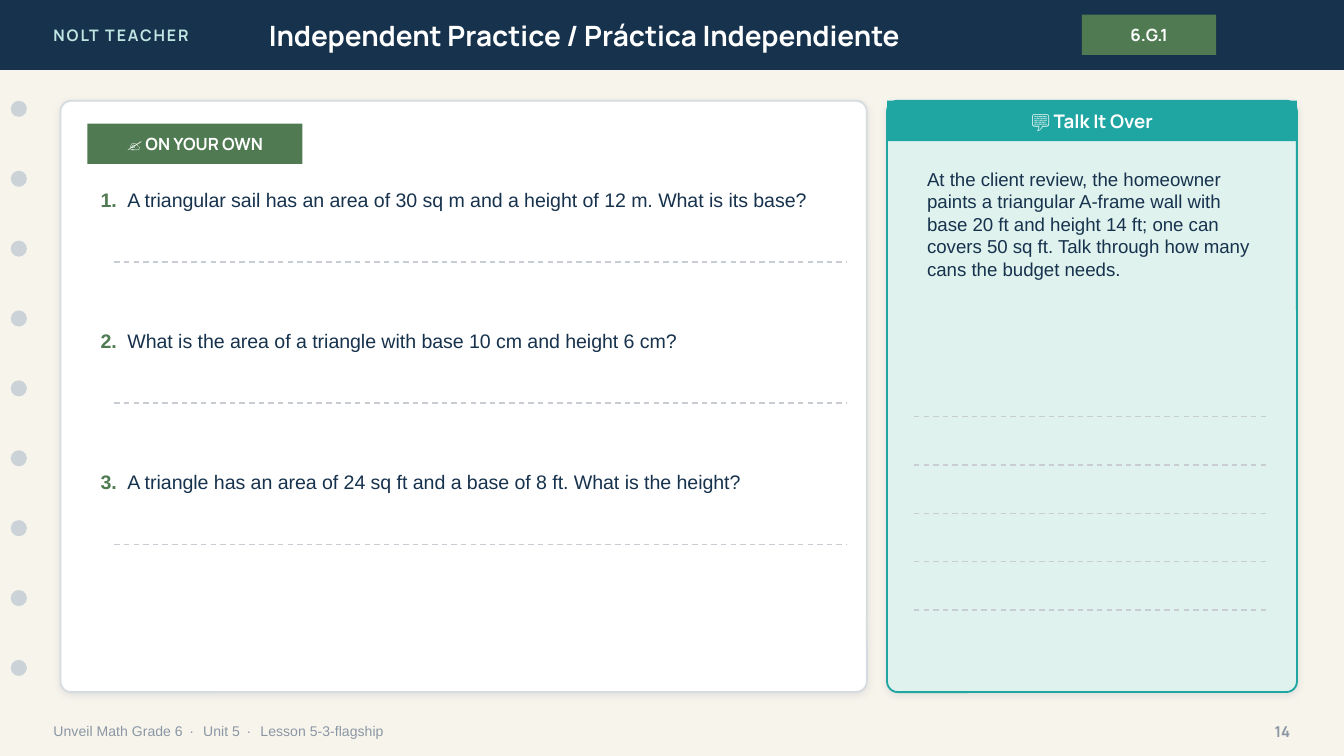
"""Build the bilingual independent practice slide."""
from lxml import etree
from pptx import Presentation
from pptx.dml.color import RGBColor
from pptx.enum.dml import MSO_LINE
from pptx.enum.shapes import MSO_CONNECTOR, MSO_SHAPE
from pptx.enum.text import MSO_ANCHOR, MSO_AUTO_SIZE, PP_ALIGN
from pptx.oxml.ns import qn
from pptx.util import Emu, Pt

EMU_PER_PX = 4572
RECTANGLE, ROUNDED, OVAL = MSO_SHAPE.RECTANGLE, MSO_SHAPE.ROUNDED_RECTANGLE, MSO_SHAPE.OVAL
STRAIGHT, DASH = MSO_CONNECTOR.STRAIGHT, MSO_LINE.DASH
TOP, MIDDLE = MSO_ANCHOR.TOP, MSO_ANCHOR.MIDDLE
LEFT, CENTER, RIGHT = PP_ALIGN.LEFT, PP_ALIGN.CENTER, PP_ALIGN.RIGHT
NO_AUTOFIT = MSO_AUTO_SIZE.NONE

HEADING_FONT, BODY_FONT = "Manrope", "Arial"
NAVY = RGBColor(0x17, 0x32, 0x4D)
GREEN = RGBColor(0x4F, 0x7A, 0x52)
TEAL = RGBColor(0x1F, 0xA6, 0xA2)
MINT = RGBColor(0xDF, 0xF2, 0xEE)
AQUA = RGBColor(0xBF, 0xE6, 0xE2)
CREAM = RGBColor(0xF7, 0xF4, 0xEC)
WHITE = RGBColor(0xFF, 0xFF, 0xFF)
HOLE_GRAY = RGBColor(0xCB, 0xD3, 0xD9)
BORDER_GRAY = RGBColor(0xD6, 0xDB, 0xDF)
RULE_GRAY = RGBColor(0xC7, 0xCD, 0xD2)
FOOTER_GRAY = RGBColor(0x8A, 0x96, 0xA3)
SHADOW_COLOR = "1C2E42"

QUESTIONS = (
    "A triangular sail has an area of 30 sq m and a height of 12 m. What is its base?",
    "What is the area of a triangle with base 10 cm and height 6 cm?",
    "A triangle has an area of 24 sq ft and a base of 8 ft. What is the height?",
)
TALK_PROMPT = (
    "At the client review, the homeowner paints a triangular A-frame wall with "
    "base 20 ft and height 14 ft; one can covers 50 sq ft. "
    "Talk through how many cans the budget needs."
)
FOOTER_PARTS = ("Unveil Math Grade 6", "Unit 5", "Lesson 5-3-flagship")


def px(*lengths):
    """Turn pixel lengths into a list of EMU lengths."""
    return [Emu(length * EMU_PER_PX) for length in lengths]


def add_run(paragraph, text, size, color, font=BODY_FONT, bold=False, spacing=0):
    """Add one formatted run, with letter spacing in hundredths of a point."""
    run = paragraph.add_run()
    run.text = text
    run.font.name = font
    run.font.size = Pt(size)
    run.font.bold = bold
    run.font.color.rgb = color
    if spacing:
        run.font._element.set("spc", str(spacing))


def set_up_text(shape, anchor=MIDDLE, align=LEFT):
    """Prepare a shape's text frame and return its first paragraph."""
    frame = shape.text_frame
    frame.word_wrap = True
    frame.auto_size = NO_AUTOFIT
    frame.vertical_anchor = anchor
    paragraph = frame.paragraphs[0]
    paragraph.alignment = align
    return paragraph


def add_text_box(slide, box, anchor=MIDDLE, align=LEFT):
    """Add a text box and return its first paragraph."""
    return set_up_text(slide.shapes.add_textbox(*px(*box)), anchor, align)


def add_block(slide, kind, box, fill):
    """Add a plain filled shape without outline or shadow."""
    shape = slide.shapes.add_shape(kind, *px(*box))
    shape.shadow.inherit = False
    shape.fill.solid()
    shape.fill.fore_color.rgb = fill
    shape.line.fill.background()
    return shape


def add_label(slide, box, fill, text, size):
    """Add a filled rectangle with a centred bold white label."""
    paragraph = set_up_text(add_block(slide, RECTANGLE, box, fill), align=CENTER)
    add_run(paragraph, text, size, WHITE, HEADING_FONT, True)


def add_card(slide, box, radius, fill, border):
    """Add a rounded, outlined panel with a soft shadow."""
    card = add_block(slide, ROUNDED, box, fill)
    card.adjustments[0] = radius
    card.line.color.rgb = border
    card.line.width = Pt(1)
    effects = card._element.spPr.find(qn("a:effectLst"))
    shadow = etree.SubElement(
        effects, qn("a:outerShdw"), blurRad=str(Pt(4)), dist=str(Pt(1)),
        dir="5400000", algn="bl", rotWithShape="0")
    color = etree.SubElement(shadow, qn("a:srgbClr"), val=SHADOW_COLOR)
    etree.SubElement(color, qn("a:alpha"), val="10000")


def add_answer_line(slide, left, right, y):
    """Add a dashed horizontal writing line."""
    connector = slide.shapes.add_connector(STRAIGHT, *px(left, y, right, y))
    connector.line.color.rgb = RULE_GRAY
    connector.line.width = Pt(0.75)
    connector.line.dash_style = DASH
    etree.SubElement(connector._element.spPr, qn("a:effectLst"))


def add_question(slide, number, text, top):
    """Add a numbered question with its answer line."""
    paragraph = add_text_box(slide, (130, top, 1130, 100), TOP)
    indent, = px(40)
    properties = paragraph._p.get_or_add_pPr()
    properties.set("marL", str(indent))
    properties.set("indent", str(-indent))
    add_run(paragraph, f"{number}.\t", 10.5, GREEN, bold=True)
    add_run(paragraph, text, 10.5, NAVY)
    add_answer_line(slide, 170, 1260, top + 120)


def add_header(slide):
    """Add the top band, title, series name and standard code."""
    add_block(slide, RECTANGLE, (0, 0, 2000, 104), NAVY)
    add_run(add_text_box(slide, (60, 0, 480, 104)),
            "NOLT TEACHER", 8.5, AQUA, HEADING_FONT, True, 100)
    title = slide.shapes.title
    title.left, title.top, title.width, title.height = px(380, 0, 1120, 104)
    add_run(set_up_text(title), "Independent Practice / Práctica Independiente",
            15, WHITE, HEADING_FONT, True)
    slide.shapes._spTree.append(title._element)
    add_label(slide, (1610, 22, 200, 60), GREEN, "6.G.1", 9)


def add_footer(slide):
    """Add the lesson reference and page number."""
    paragraph = add_text_box(slide, (60, 1060, 1400, 56))
    for index, part in enumerate(FOOTER_PARTS):
        if index:
            add_run(paragraph, " · ", 7.5, FOOTER_GRAY, spacing=140)
        add_run(paragraph, part, 7.5, FOOTER_GRAY)
    add_run(add_text_box(slide, (1840, 1060, 100, 56), align=RIGHT),
            "14", 8, FOOTER_GRAY, HEADING_FONT, True)


def add_practice_panel(slide):
    """Add the card of independent questions."""
    add_card(slide, (90, 150, 1200, 880), 0.018, WHITE, BORDER_GRAY)
    add_label(slide, (130, 184, 320, 60), GREEN, "✍️ ON YOUR OWN", 9)
    for index, question in enumerate(QUESTIONS):
        add_question(slide, index + 1, question, 270 + 210 * index)


def add_talk_panel(slide):
    """Add the discussion card with its writing lines."""
    add_card(slide, (1320, 150, 610, 880), 0.026, MINT, TEAL)
    add_label(slide, (1320, 150, 610, 60), TEAL, "💬 Talk It Over", 10)
    add_run(add_text_box(slide, (1360, 240, 540, 340), TOP), TALK_PROMPT, 10, NAVY)
    for index in range(5):
        add_answer_line(slide, 1360, 1890, 620 + 72 * index)


def main():
    """Build and save the presentation."""
    presentation = Presentation()
    presentation.slide_width, presentation.slide_height = px(2000, 1125)
    slide = presentation.slides.add_slide(presentation.slide_layouts[5])
    slide.background.fill.solid()
    slide.background.fill.fore_color.rgb = CREAM
    add_header(slide)
    for index in range(9):
        add_block(slide, OVAL, (16, 150 + 104 * index, 24, 24), HOLE_GRAY)
    add_footer(slide)
    add_practice_panel(slide)
    add_talk_panel(slide)
    presentation.save("out.pptx")


if __name__ == "__main__":
    main()
